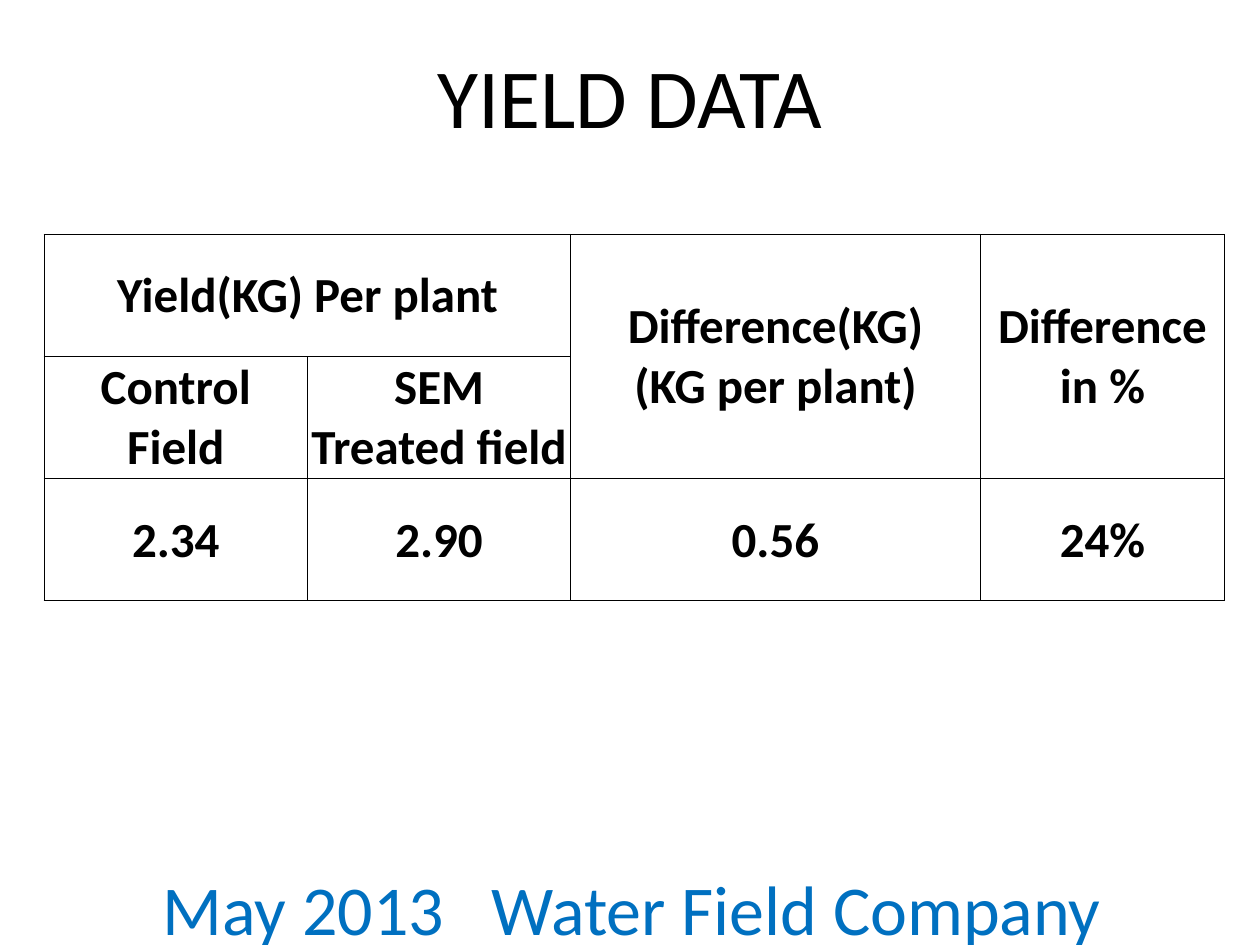
from dataclasses import dataclass
from lxml.etree import SubElement as Sub
from pptx import Presentation
from pptx.dml.color import RGBColor as Rgb
from pptx.enum.text import MSO_ANCHOR as Anchor, PP_ALIGN as Align
from pptx.oxml.ns import qn
from pptx.util import Inches, Pt

WIDE, HIGH = 10, 7.5


@dataclass(frozen=True)
class Theme:
    font: str = "Calibri"
    ink: str = "000000"
    blue: str = "0070C0"
    head: int = 48
    foot: int = 40
    body: int = 28
    rule: float = 0.5


@dataclass(frozen=True)
class Box:
    left: float
    top: float
    width: float
    height: float

    def size(self) -> tuple:
        return (Inches(self.left * WIDE), Inches(self.top * HIGH),
                Inches(self.width * WIDE), Inches(self.height * HIGH))


@dataclass(frozen=True)
class Item:
    row: int
    col: int
    lines: tuple
    down: int = 1
    over: int = 1


THEME = Theme()
TITLE = Box(0.05, 0.017, 0.9, 0.167)
GRID = Box(0.035, 0.248, 0.937, 0.388)
FOOT = Box(0.028, 0.941, 0.972, 0.039)
COLS = (0.209, 0.209, 0.325, 0.194)
ROWS = 3
ITEMS = (
    Item(0, 0, ("Yield(KG) Per plant",), over=2),
    Item(0, 2, ("Difference(KG)", "(KG per plant)"), down=2),
    Item(0, 3, ("Difference in %",), down=2),
    Item(1, 0, ("Control", "Field")),
    Item(1, 1, ("SEM", "Treated field")),
    *(Item(2, col, (text,)) for col, text in enumerate(("2.34", "2.90", "0.56", "24%"))),
)


def add_run(para, text: str, size: int, tint: str, bold: bool = False):
    para.alignment = Align.CENTER
    run = para.add_run()
    run.text = text
    font = run.font
    font.name, font.size, font.bold = THEME.font, Pt(size), bold
    font.color.rgb = Rgb.from_string(tint)
    return run


def add_rules(cell) -> None:
    props = cell._tc.get_or_add_tcPr()
    for side in ("lnL", "lnR", "lnT", "lnB"):
        line = Sub(props, qn(f"a:{side}"), w=str(int(Pt(THEME.rule))))
        fill = Sub(line, qn("a:solidFill"))
        Sub(fill, qn("a:srgbClr"), val=THEME.ink)


def add_title(slide) -> None:
    shape = slide.shapes.title
    shape.left, shape.top, shape.width, shape.height = TITLE.size()
    frame = shape.text_frame
    frame.vertical_anchor = Anchor.MIDDLE
    add_run(frame.paragraphs[0], "YIELD DATA", THEME.head, THEME.ink)


def add_grid(slide) -> None:
    table = slide.shapes.add_table(ROWS, len(COLS), *GRID.size()).table
    table.first_row = table.horz_banding = False
    for col, share in zip(table.columns, COLS):
        col.width = Inches(share * WIDE)
    for row in table.rows:
        row.height = Inches(GRID.height * HIGH / ROWS)
    for cell in table.iter_cells():
        cell.margin_left = cell.margin_right = cell.margin_top = Inches(0.01)
        cell.margin_bottom = 0
        cell.vertical_anchor = Anchor.MIDDLE
        add_rules(cell)
        cell.fill.background()
    for item in ITEMS:
        cell = table.cell(item.row, item.col)
        if item.down * item.over > 1:
            cell.merge(table.cell(item.row + item.down - 1, item.col + item.over - 1))
        frame = cell.text_frame
        for spot, text in enumerate(item.lines):
            para = frame.add_paragraph() if spot else frame.paragraphs[0]
            add_run(para, text, THEME.body, THEME.ink, True)


def add_foot(slide) -> None:
    frame = slide.shapes.add_textbox(*FOOT.size()).text_frame
    frame.word_wrap = True
    frame.vertical_anchor = Anchor.MIDDLE
    frame.margin_right = Inches(0.35)
    para = frame.paragraphs[0]
    add_run(para, "May 2013", THEME.foot, THEME.blue)
    gap = add_run(para, " ", THEME.foot, THEME.blue)
    gap.font._element.set("spc", "1800")
    add_run(para, "Water Field Company", THEME.foot, THEME.blue)


def main() -> None:
    deck = Presentation()
    deck.slide_width, deck.slide_height = Inches(WIDE), Inches(HIGH)
    slide = deck.slides.add_slide(deck.slide_layouts[5])
    add_title(slide)
    add_grid(slide)
    add_foot(slide)
    deck.save("out.pptx")


if __name__ == "__main__":
    main()
